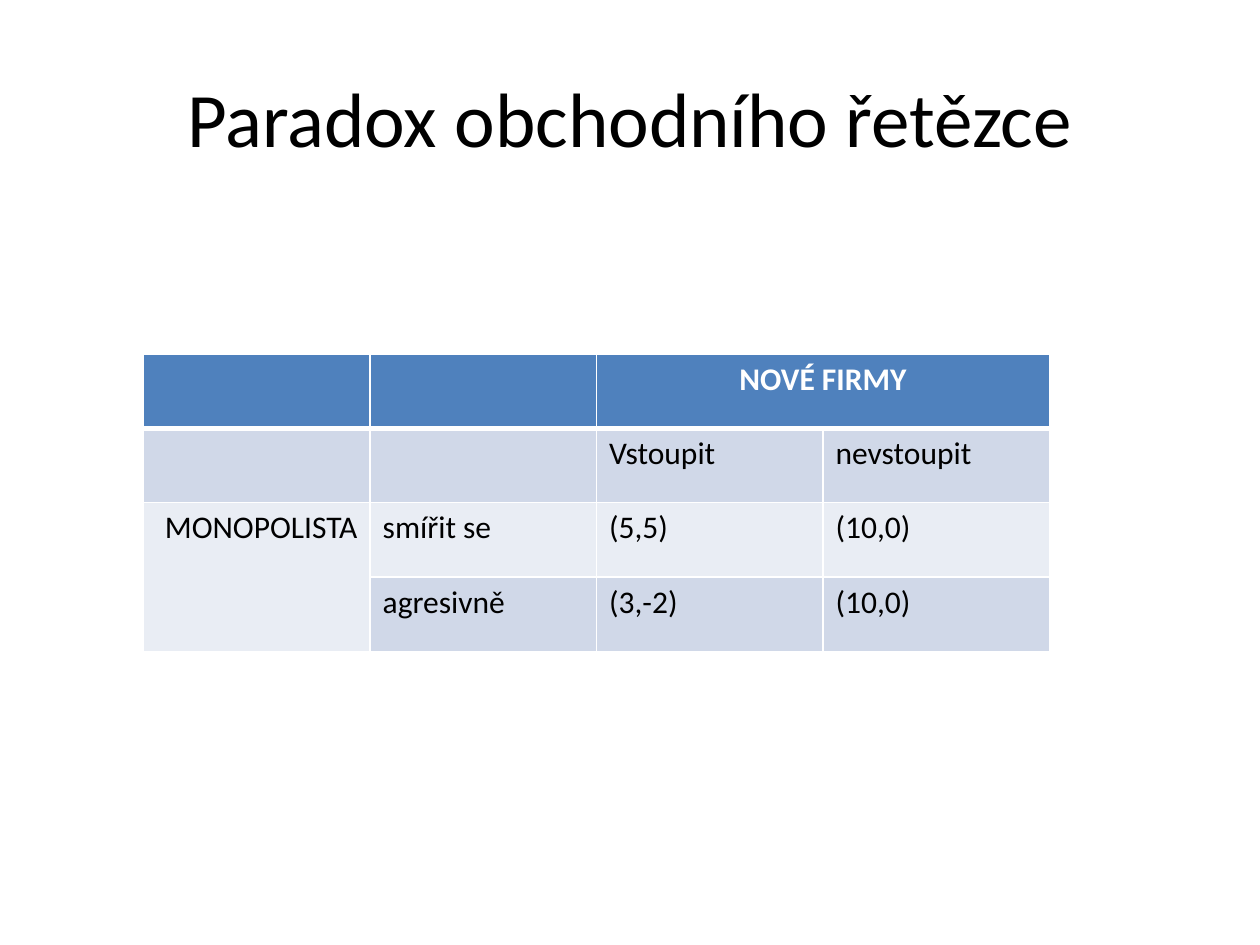
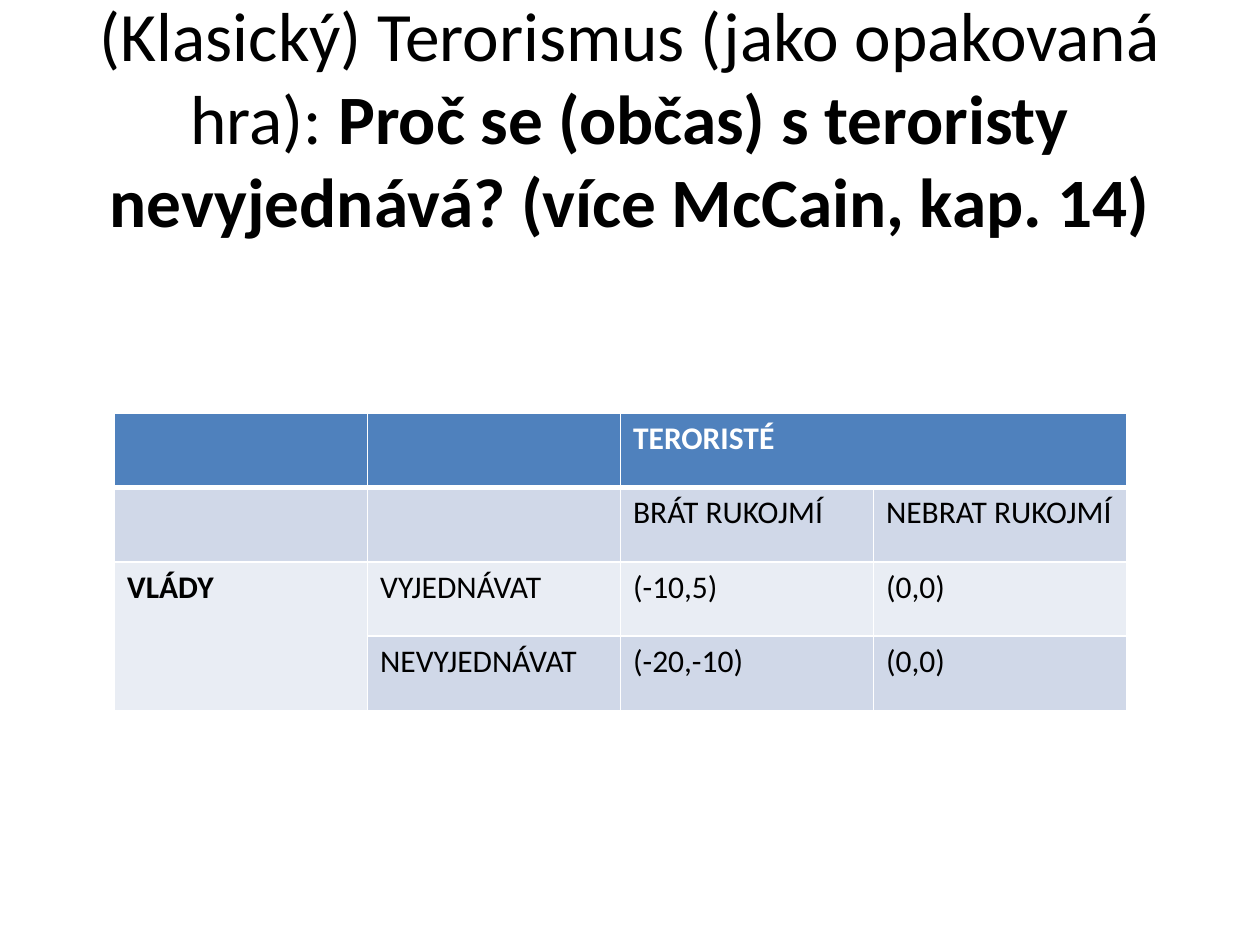
from lxml.etree import SubElement
from pptx import Presentation
from pptx.dml.color import RGBColor
from pptx.enum.text import MSO_ANCHOR, MSO_AUTO_SIZE, PP_ALIGN
from pptx.oxml.ns import qn
from pptx.util import Inches, Pt

BLACK = RGBColor(0x00, 0x00, 0x00)
WHITE = RGBColor(0xFF, 0xFF, 0xFF)
HEADER_BLUE = RGBColor(0x4F, 0x81, 0xBD)
BAND_DARK = RGBColor(0xD0, 0xD8, 0xE8)
BAND_LIGHT = RGBColor(0xE9, 0xED, 0xF4)
ROW_FILLS = (HEADER_BLUE, BAND_DARK, BAND_LIGHT, BAND_DARK)

FONT = "Calibri"
TABLE_SIZE = 18
THIN, THICK = 1, 3
GRID_COLUMNS, GRID_ROWS = 100, 75
MATRIX_SIDE = 4
MATRIX_HEIGHT = 23.6


class GameDeck:
    """Holds the deck, its style and the current slide; lengths are grid columns and rows."""

    def __init__(self):
        self.deck = Presentation()
        self.deck.slide_width = Inches(10)
        self.deck.slide_height = Inches(7.5)
        self.page = None

    def columns(self, count):
        return round(self.deck.slide_width * count / GRID_COLUMNS)

    def rows(self, count):
        return round(self.deck.slide_height * count / GRID_ROWS)

    def add_page(self):
        self.page = self.deck.slides.add_slide(self.deck.slide_layouts.get_by_name("Title Only"))

    def add_run(self, para, text, size, color=BLACK, bold=False):
        span = para.add_run()
        span.text = text
        span.font.name = FONT
        span.font.size = Pt(size)
        span.font.bold = bold
        span.font.color.rgb = color

    def add_title(self, parts, size):
        """Fill the title placeholder from (text, bold) parts."""
        title = self.page.shapes.title
        title.left, title.top = self.columns(5), self.rows(3)
        title.width, title.height = self.columns(90), self.rows(12.5)
        frame = title.text_frame
        frame.word_wrap = True
        frame.auto_size = MSO_AUTO_SIZE.NONE
        frame.vertical_anchor = MSO_ANCHOR.MIDDLE
        para = frame.paragraphs[0]
        para.alignment = PP_ALIGN.CENTER
        for text, bold in parts:
            self.add_run(para, text, size, bold=bold)

    def add_borders(self, cell, row):
        properties = cell._tc.get_or_add_tcPr()
        top = THICK if row == 1 else THIN
        bottom = THICK if row == 0 else THIN
        for side, width in (("lnL", THIN), ("lnR", THIN), ("lnT", top), ("lnB", bottom)):
            line = SubElement(properties, qn(f"a:{side}"), w=str(Pt(width)))
            fill = SubElement(line, qn("a:solidFill"))
            SubElement(fill, qn("a:srgbClr"), val=str(WHITE))

    def add_matrix(self, left, top, width, texts, alignments, bold_cells):
        """Draw a payoff matrix with the column player on top and the row player at left."""
        frame = self.page.shapes.add_table(
            MATRIX_SIDE, MATRIX_SIDE, self.columns(left), self.rows(top),
            self.columns(width), self.rows(MATRIX_HEIGHT))
        table = frame.table
        table.cell(0, 2).merge(table.cell(0, 3))
        table.cell(2, 0).merge(table.cell(3, 0))
        for row, row_texts in enumerate(texts):
            for column, text in enumerate(row_texts):
                cell = table.cell(row, column)
                self.add_borders(cell, row)
                cell.fill.solid()
                cell.fill.fore_color.rgb = ROW_FILLS[row]
                if text:
                    para = cell.text_frame.paragraphs[0]
                    para.alignment = alignments.get((row, column), PP_ALIGN.LEFT)
                    self.add_run(para, text, TABLE_SIZE, WHITE if row == 0 else BLACK,
                                 (row, column) in bold_cells)


def main():
    game = GameDeck()
    column_player, row_player = (0, 2), (2, 0)

    game.add_page()
    game.add_title([("Paradox obchodního řetězce", False)], 44)
    game.add_matrix(
        11.4, 28.1, 71.9,
        [("", "", "NOVÉ FIRMY", ""),
         ("", "", "Vstoupit", "nevstoupit"),
         ("MONOPOLISTA", "smířit se", "(5,5)", "(10,0)"),
         ("", "agresivně", "(3,-2)", "(10,0)")],
        {column_player: PP_ALIGN.CENTER, row_player: PP_ALIGN.RIGHT},
        {column_player})

    game.add_page()
    game.add_title(
        [("(Klasický) Terorismus (jako opakovaná hra): ", False),
         ("Proč se (občas) s teroristy nevyjednává? (více McCain, kap. 14)", True)], 39.6)
    game.add_matrix(
        9.1, 32.8, 80.3,
        [("", "", "TERORISTÉ", ""),
         ("", "", "BRÁT RUKOJMÍ", "NEBRAT RUKOJMÍ"),
         ("VLÁDY", "VYJEDNÁVAT", "(-10,5)", "(0,0)"),
         ("", "NEVYJEDNÁVAT", "(-20,-10)", "(0,0)")],
        {}, {column_player, row_player})

    game.deck.save("out.pptx")


if __name__ == "__main__":
    main()
